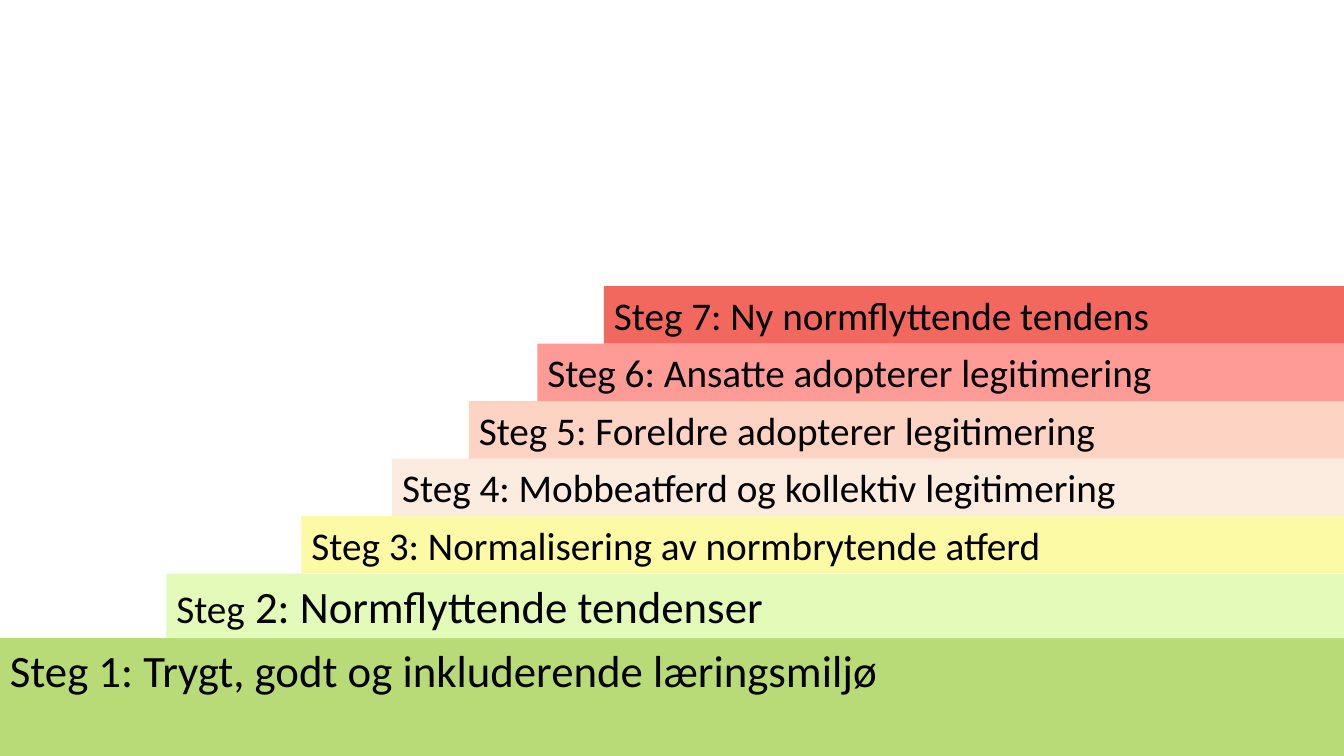
import pptx
import pptx.dml.color
import pptx.enum.text
import pptx.util
from dataclasses import dataclass

Inches = pptx.util.Inches


@dataclass(frozen=True)
class Theme:
    font: str = "Calibri"
    text: str = "000000"
    large: int = 32
    normal: int = 28
    fills: tuple = ("B8DB77", "E3FAB8", "FDFAA6", "FCEBDF",
                    "FDD3C3", "FF9B96", "F2685F")


theme = Theme()

# Content, lowest step first: left edge, height, runs of (text, size)
STEPS = [
    (0, 1.17, [("Steg 1: Trygt, godt og inkluderende læringsmiljø", theme.large)]),
    (1.65, 0.64, [("Steg", theme.normal),
                  (" 2: Normflyttende tendenser", theme.large)]),
    (2.99, 0.57, [("Steg 3: Normalisering av normbrytende atferd", theme.normal)]),
    (3.89, 0.57, [("Steg 4: Mobbeatferd og kollektiv legitimering", theme.normal)]),
    (4.65, 0.57, [("Steg 5: Foreldre adopterer legitimering", theme.normal)]),
    (5.33, 0.57, [("Steg 6: Ansatte adopterer legitimering", theme.normal)]),
    (5.99, 0.57, [("Steg 7: Ny normflyttende tendens", theme.normal)]),
]
WIDTH, HEIGHT = 13.33, 7.5


def add_step(page, left, top, height, fill, runs):
    """Draw one step reaching from its left edge to the right slide edge."""
    box = page.shapes.add_textbox(Inches(left), Inches(top),
                                  Inches(WIDTH - left), Inches(height))
    box.fill.solid()
    box.fill.fore_color.rgb = pptx.dml.color.RGBColor.from_string(fill)
    frame = box.text_frame
    frame.word_wrap = True
    frame.vertical_anchor = pptx.enum.text.MSO_ANCHOR.TOP
    para = frame.paragraphs[0]
    for text, size in runs:
        span = para.add_run()
        span.text = text
        span.font.name = theme.font
        span.font.size = pptx.util.Pt(size)
        span.font.color.rgb = pptx.dml.color.RGBColor.from_string(theme.text)


def main():
    deck = pptx.Presentation()
    deck.slide_width, deck.slide_height = Inches(WIDTH), Inches(HEIGHT)
    page = deck.slides.add_slide(deck.slide_layouts[6])

    # Stack the steps upwards from the bottom edge
    top = HEIGHT
    for (left, height, runs), fill in zip(STEPS, theme.fills):
        top -= height
        add_step(page, left, top, height, fill, runs)

    deck.save("out.pptx")


if __name__ == "__main__":
    main()
